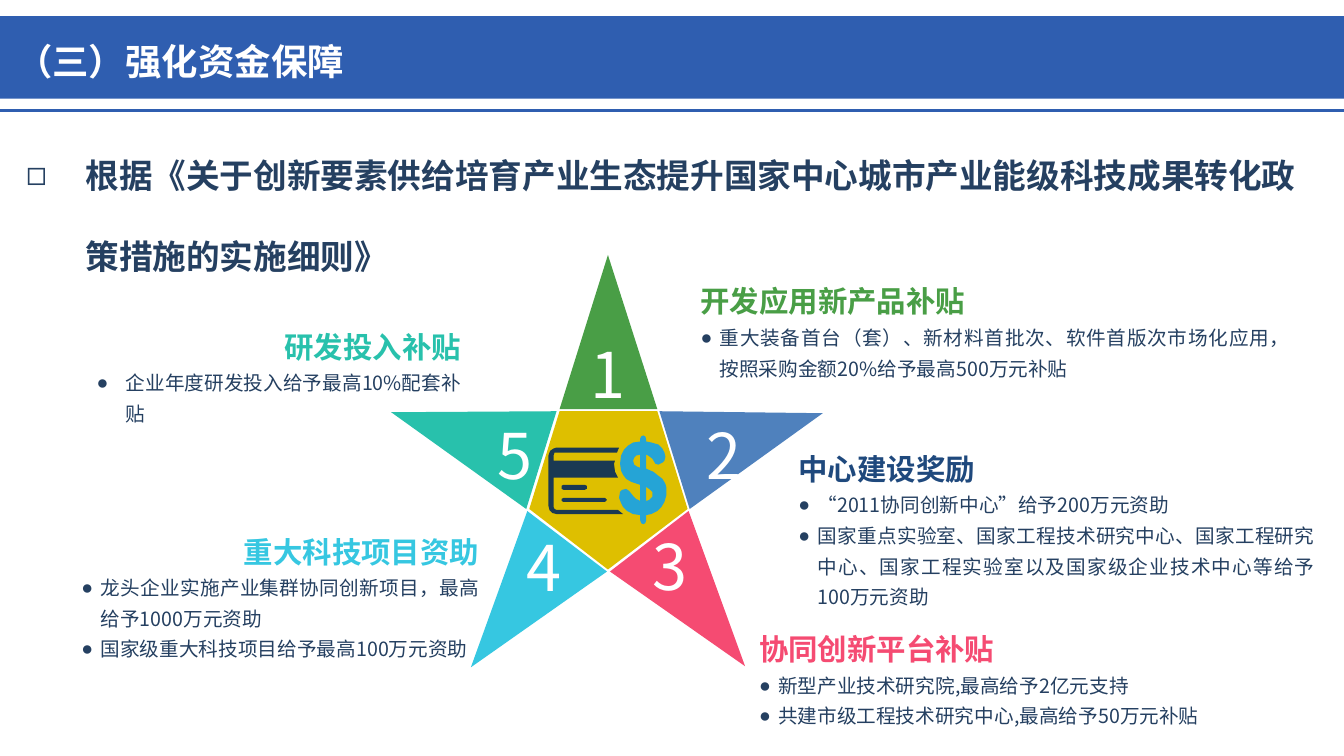
from dataclasses import dataclass
from typing import Any

from lxml import etree
from pptx import Presentation
from pptx.dml.color import RGBColor
from pptx.enum.shapes import MSO_CONNECTOR, MSO_SHAPE
from pptx.enum.text import MSO_ANCHOR, MSO_AUTO_SIZE, PP_ALIGN
from pptx.oxml.ns import qn
from pptx.util import Inches, Pt

LEFT, RIGHT, CENTER, JUSTIFY = PP_ALIGN.LEFT, PP_ALIGN.RIGHT, PP_ALIGN.CENTER, PP_ALIGN.JUSTIFY
TOP, MIDDLE = MSO_ANCHOR.TOP, MSO_ANCHOR.MIDDLE
GROW, FIXED = MSO_AUTO_SIZE.SHAPE_TO_FIT_TEXT, MSO_AUTO_SIZE.NONE
RECTANGLE, STRAIGHT = MSO_SHAPE.RECTANGLE, MSO_CONNECTOR.STRAIGHT
Outline = list[tuple[int, int]]


@dataclass(frozen=True)
class Theme:
    font: str = "Noto Sans CJK SC"
    bullet_font: str = "Arial"
    banner: str = "2F5EB0"
    white: str = "FFFFFF"
    ink: str = "254061"
    gold: str = "DEBF00"
    green: str = "499E46"
    blue: str = "4F81BD"
    navy: str = "1F497D"
    pink: str = "F54B72"
    cyan: str = "36C7E1"
    teal: str = "28C1AC"
    card: str = "1A3953"
    dollar: str = "25A4D6"
    title_size: float = 26
    basis_size: float = 24
    heading_size: float = 21
    item_size: float = 14
    digit_size: float = 45


THEME = Theme()


@dataclass(frozen=True)
class Subsidy:
    box: tuple[float, float, float, float]
    heading: str
    color: str
    items: tuple[str, ...]
    align: Any = LEFT
    indent: tuple[float, float] = (0.19, -0.19)


@dataclass(frozen=True)
class StarPoint:
    digit: str
    color: str
    outline: Outline
    insets: tuple[float, float, float, float]
    anchor: Any = MIDDLE
    align: Any = CENTER


SUBSIDIES = [
    Subsidy((0.71, 5.14, 4.14, 1.48), "重大科技项目资助", THEME.cyan,
            ("龙头企业实施产业集群协同创新项目，最高给予1000万元资助",
             "国家级重大科技项目给予最高100万元资助"), RIGHT),
    Subsidy((6.85, 2.66, 6.04, 1.17), "开发应用新产品补贴", THEME.green,
            ("重大装备首台（套）、新材料首批次、软件首版次市场化应用，按照采购金额20%给予最高500万元补贴",)),
    Subsidy((7.82, 4.32, 5.32, 1.79), "中心建设奖励", THEME.navy,
            ("“2011协同创新中心”给予200万元资助",
             "国家重点实验室、国家工程技术研究中心、国家工程研究中心、国家工程实验室以及国家级企业技术中心等给予100万元资助")),
    Subsidy((7.43, 6.11, 5, 1.17), "协同创新平台补贴", THEME.pink,
            ("新型产业技术研究院,最高给予2亿元支持",
             "共建市级工程技术研究中心,最高给予50万元补贴")),
    Subsidy((0.37, 3.11, 4.3, 1.17), "研发投入补贴", THEME.teal,
            ("企业年度研发投入给予最高10%配套补贴",), RIGHT, (0.78, -0.29)),
]

STAR_CORE = [(652, 408), (555, 408), (525, 505), (603, 565), (682, 505)]
STAR_POINTS = [
    StarPoint("1", THEME.green, [(555, 406), (603, 253), (652, 406)], (0.1, 0.87, 0.1, 0.05)),
    StarPoint("2", THEME.blue, [(654, 408), (816, 410), (684, 505)],
              (0.47, 0.05, 0.1, 0.05), TOP, LEFT),
    StarPoint("3", THEME.pink, [(683, 507), (739, 661), (605, 567)], (0.1, 0.05, 0.24, 0.51)),
    StarPoint("4", THEME.cyan, [(602, 567), (467, 662), (523, 507)], (0.2, 0.05, 0.1, 0.51)),
    StarPoint("5", THEME.teal, [(522, 505), (388, 409), (552, 408)],
              (0.91, 0.05, 0.1, 0.05), TOP),
]

CARD = [
    [(613, 506), (552, 506), (550, 505), (549, 503), (549, 474), (613, 474), (610, 468),
     (609, 460), (610, 457), (549, 457), (549, 452), (550, 449), (552, 449), (612, 449),
     (614, 444), (552, 444), (549, 445), (546, 447), (545, 449), (544, 452), (544, 502),
     (545, 506), (548, 509), (552, 510), (618, 510)],
    [(559, 498), (600, 498), (602, 496), (600, 494), (559, 494), (557, 495), (557, 497)],
    [(580, 486), (582, 485), (582, 482), (580, 481), (559, 481), (557, 482), (557, 485), (559, 486)],
]
DOLLAR = [
    [(635, 481), (626, 478), (621, 475), (618, 471), (616, 467), (615, 460), (616, 452),
     (619, 446), (623, 442), (628, 439), (635, 438), (635, 435), (636, 433), (638, 432),
     (640, 433), (641, 436), (641, 438), (646, 439), (653, 441), (657, 445), (659, 449),
     (660, 453), (659, 457), (657, 459), (653, 461), (650, 460), (647, 455), (643, 452),
     (641, 451), (641, 465), (648, 468), (653, 472), (657, 475), (660, 480), (661, 484),
     (661, 491), (659, 498), (656, 503), (652, 507), (646, 510), (641, 511), (641, 516),
     (640, 519), (638, 520), (636, 519), (635, 516), (635, 511), (628, 510), (622, 507),
     (618, 503), (616, 499), (614, 494), (615, 488), (617, 486), (621, 485), (624, 487),
     (628, 492), (631, 495), (635, 497)],
    [(635, 451), (631, 452), (629, 454), (628, 457), (629, 461), (632, 463), (635, 464)],
    [(641, 497), (644, 496), (647, 493), (647, 488), (645, 486), (641, 483)],
]


def apply(target: Any, values: dict[str, Any]) -> None:
    for attribute, value in values.items():
        setattr(target, attribute, value)


def write(paragraph: Any, text: str, size: float, color: str, bold: bool = False,
          align: Any = LEFT, spacing: float = 1.0, bullet: str = "",
          indent: tuple[float, float] = (0, 0)) -> None:
    if bullet:
        properties = paragraph._p.get_or_add_pPr()
        properties.set("marL", str(Inches(indent[0])))
        properties.set("indent", str(Inches(indent[1])))
        etree.SubElement(properties, qn("a:buFont")).set("typeface", THEME.bullet_font)
        etree.SubElement(properties, qn("a:buChar")).set("char", bullet)
    apply(paragraph, {"alignment": align, "line_spacing": spacing})
    run = paragraph.add_run()
    run.text = text
    apply(run.font, {"size": Pt(size), "bold": bold, "name": THEME.font})
    run.font.color.rgb = RGBColor.from_string(color)
    etree.SubElement(run.font._element, qn("a:ea")).set("typeface", THEME.font)


def paint(shape: Any, color: str) -> None:
    shape.shadow.inherit = False
    shape.fill.solid()
    shape.fill.fore_color.rgb = RGBColor.from_string(color)
    shape.line.fill.background()


def add_outline(slide: Any, contours: list[Outline], color: str) -> Any:
    builder = slide.shapes.build_freeform(*contours[0][0], scale=Inches(0.01))
    builder.add_line_segments(contours[0][1:])
    for contour in contours[1:]:
        builder.move_to(*contour[0])
        builder.add_line_segments(contour[1:])
    outline = builder.convert_to_shape()
    paint(outline, color)
    return outline


def add_text_frame(slide: Any, box: tuple[float, float, float, float]) -> Any:
    frame = slide.shapes.add_textbox(*map(Inches, box)).text_frame
    apply(frame, {"word_wrap": True, "auto_size": GROW})
    return frame


def add_banner(slide: Any, width: int) -> None:
    band = slide.shapes.add_shape(RECTANGLE, 0, Inches(0.16), width, Inches(0.82))
    paint(band, THEME.banner)
    rule = slide.shapes.add_connector(STRAIGHT, 0, Inches(1.1), width, Inches(1.1))
    rule.line.color.rgb = RGBColor.from_string(THEME.banner)
    rule.line.width = Pt(2.25)
    etree.SubElement(rule._element.spPr, qn("a:effectLst"))


def add_title(slide: Any) -> None:
    title = slide.shapes.title
    apply(title, {"left": Inches(0.06), "top": Inches(0.2),
                  "width": Inches(5.11), "height": Inches(0.72)})
    apply(title.text_frame, {"word_wrap": True, "auto_size": FIXED, "vertical_anchor": MIDDLE})
    write(title.text_frame.paragraphs[0], "（三）强化资金保障", THEME.title_size,
          THEME.white, True, spacing=1.2)
    title.element.getparent().append(title.element)


def add_subsidy(slide: Any, subsidy: Subsidy) -> None:
    frame = add_text_frame(slide, subsidy.box)
    write(frame.paragraphs[0], subsidy.heading, THEME.heading_size, subsidy.color,
          True, subsidy.align, 1.3)
    for item in subsidy.items:
        write(frame.add_paragraph(), item, THEME.item_size, THEME.ink, False,
              JUSTIFY, 1.3, "●", subsidy.indent)


def add_star_point(slide: Any, point: StarPoint) -> None:
    frame = add_outline(slide, [point.outline], point.color).text_frame
    sides = ("margin_left", "margin_top", "margin_right", "margin_bottom")
    apply(frame, dict(zip(sides, map(Inches, point.insets))))
    apply(frame, {"word_wrap": True, "vertical_anchor": point.anchor})
    write(frame.paragraphs[0], point.digit, THEME.digit_size, THEME.white, align=point.align)


def main() -> None:
    presentation = Presentation()
    apply(presentation, {"slide_width": Inches(13.33), "slide_height": Inches(7.5)})
    slide = presentation.slides.add_slide(presentation.slide_layouts[5])
    add_banner(slide, presentation.slide_width)
    add_title(slide)
    basis = add_text_frame(slide, (0.16, 1.09, 13.07, 1.72))
    write(basis.paragraphs[0],
          "根据《关于创新要素供给培育产业生态提升国家中心城市产业能级科技成果转化政策措施的实施细则》",
          THEME.basis_size, THEME.ink, True, LEFT, 2.0, "◻", (0.59, -0.59))
    for subsidy in SUBSIDIES:
        add_subsidy(slide, subsidy)
    add_outline(slide, [STAR_CORE], THEME.gold)
    for point in STAR_POINTS:
        add_star_point(slide, point)
    add_outline(slide, CARD, THEME.card)
    add_outline(slide, DOLLAR, THEME.dollar)
    presentation.save("out.pptx")


if __name__ == "__main__":
    main()
